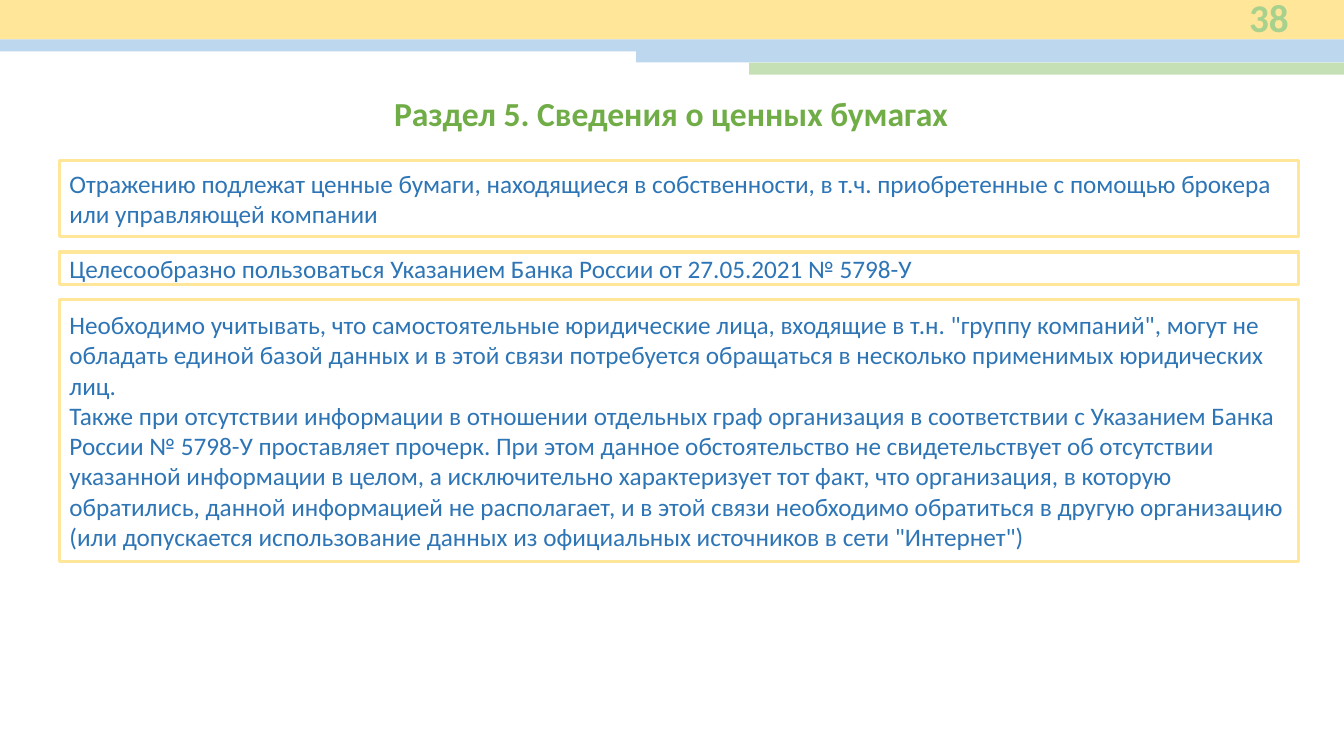
from pptx import Presentation
from pptx.dml.color import RGBColor
from pptx.enum.shapes import MSO_SHAPE
from pptx.enum.text import MSO_ANCHOR, PP_ALIGN
from pptx.util import Pt

RECTANGLE = MSO_SHAPE.RECTANGLE
TOP, MIDDLE = MSO_ANCHOR.TOP, MSO_ANCHOR.MIDDLE
LEFT, CENTER, RIGHT = PP_ALIGN.LEFT, PP_ALIGN.CENTER, PP_ALIGN.RIGHT

YELLOW = RGBColor(0xFF, 0xE6, 0x99)
LIGHT_BLUE = RGBColor(0xBD, 0xD7, 0xEE)
LIGHT_GREEN = RGBColor(0xC5, 0xE0, 0xB4)
NUMBER_GREEN = RGBColor(0xA9, 0xD1, 0x8E)
TITLE_GREEN = RGBColor(0x70, 0xAD, 0x47)
TEXT_BLUE = RGBColor(0x2E, 0x75, 0xB6)

EMU_PER_PX = 9144
SLIDE_WIDTH, SLIDE_HEIGHT = 1333, 750
MARGIN_LEFT = 59
BOX_WIDTH = 1229
BOX_GAP = 15

BANDS = [
    (0, 0, 39, YELLOW),
    (0, 39, 12, LIGHT_BLUE),
    (631, 50, 12, LIGHT_BLUE),
    (743, 62, 12, LIGHT_GREEN),
]

NOTICES = [
    (76, "Отражению подлежат ценные бумаги, находящиеся в собственности, "
         "в т.ч. приобретенные с помощью брокера или управляющей компании"),
    (32, "Целесообразно пользоваться Указанием Банка России "
         "от 27.05.2021 № 5798-У"),
    (260, "Необходимо учитывать, что самостоятельные юридические лица, "
          "входящие в т.н. \"группу компаний\", могут не обладать единой базой "
          "данных и в этой связи потребуется обращаться в несколько "
          "применимых юридических лиц.\n"
          "Также при отсутствии информации в отношении отдельных граф "
          "организация в соответствии с Указанием Банка России № 5798-У "
          "проставляет прочерк. При этом данное обстоятельство не "
          "свидетельствует об отсутствии указанной информации в целом, а "
          "исключительно характеризует тот факт, что организация, в которую "
          "обратились, данной информацией не располагает, и в этой связи "
          "необходимо обратиться в другую организацию (или допускается "
          "использование данных из официальных источников в сети "
          "\"Интернет\")"),
]


class SlideBuilder:
    font_name = "Calibri"
    border_width = Pt(2.25)

    def __init__(self, slide):
        self.slide = slide

    def scale(self, *lengths):
        return [length * EMU_PER_PX for length in lengths]

    def rectangle(self, left, top, width, height):
        shape = self.slide.shapes.add_shape(
            RECTANGLE, *self.scale(left, top, width, height))
        shape.shadow.inherit = False
        return shape

    def set_text(self, shape, text, size, color, bold, align, anchor):
        frame = shape.text_frame
        frame.text = text
        frame.word_wrap = True
        frame.vertical_anchor = anchor
        for paragraph in frame.paragraphs:
            paragraph.alignment = align
            for run in paragraph.runs:
                run.font.name = self.font_name
                run.font.size = Pt(size)
                run.font.bold = bold
                run.font.color.rgb = color

    def band(self, left, top, height, color):
        shape = self.rectangle(left, top, SLIDE_WIDTH - left, height)
        shape.fill.solid()
        shape.fill.fore_color.rgb = color
        shape.line.fill.background()

    def notice(self, top, height, text):
        shape = self.rectangle(MARGIN_LEFT, top, BOX_WIDTH, height)
        shape.fill.background()
        shape.line.color.rgb = YELLOW
        shape.line.width = self.border_width
        self.set_text(shape, text, 18, TEXT_BLUE, False, LEFT, MIDDLE)

    def label(self, left, top, width, height, text, size, color, align, anchor):
        shape = self.slide.shapes.add_textbox(
            *self.scale(left, top, width, height))
        self.set_text(shape, text, size, color, True, align, anchor)


def main():
    presentation = Presentation()
    presentation.slide_width = SLIDE_WIDTH * EMU_PER_PX
    presentation.slide_height = SLIDE_HEIGHT * EMU_PER_PX
    slide = presentation.slides.add_slide(presentation.slide_layouts[6])
    builder = SlideBuilder(slide)

    for band in BANDS:
        builder.band(*band)

    builder.label(MARGIN_LEFT, 87, 1213, 50,
                  "Раздел 5. Сведения о ценных бумагах",
                  24, TITLE_GREEN, CENTER, TOP)

    top = 159
    for height, text in NOTICES:
        builder.notice(top, height, text)
        top += height + BOX_GAP

    builder.label(1163, -5, 125, 44, "38", 28, NUMBER_GREEN, RIGHT, MIDDLE)
    presentation.save("out.pptx")


if __name__ == "__main__":
    main()
